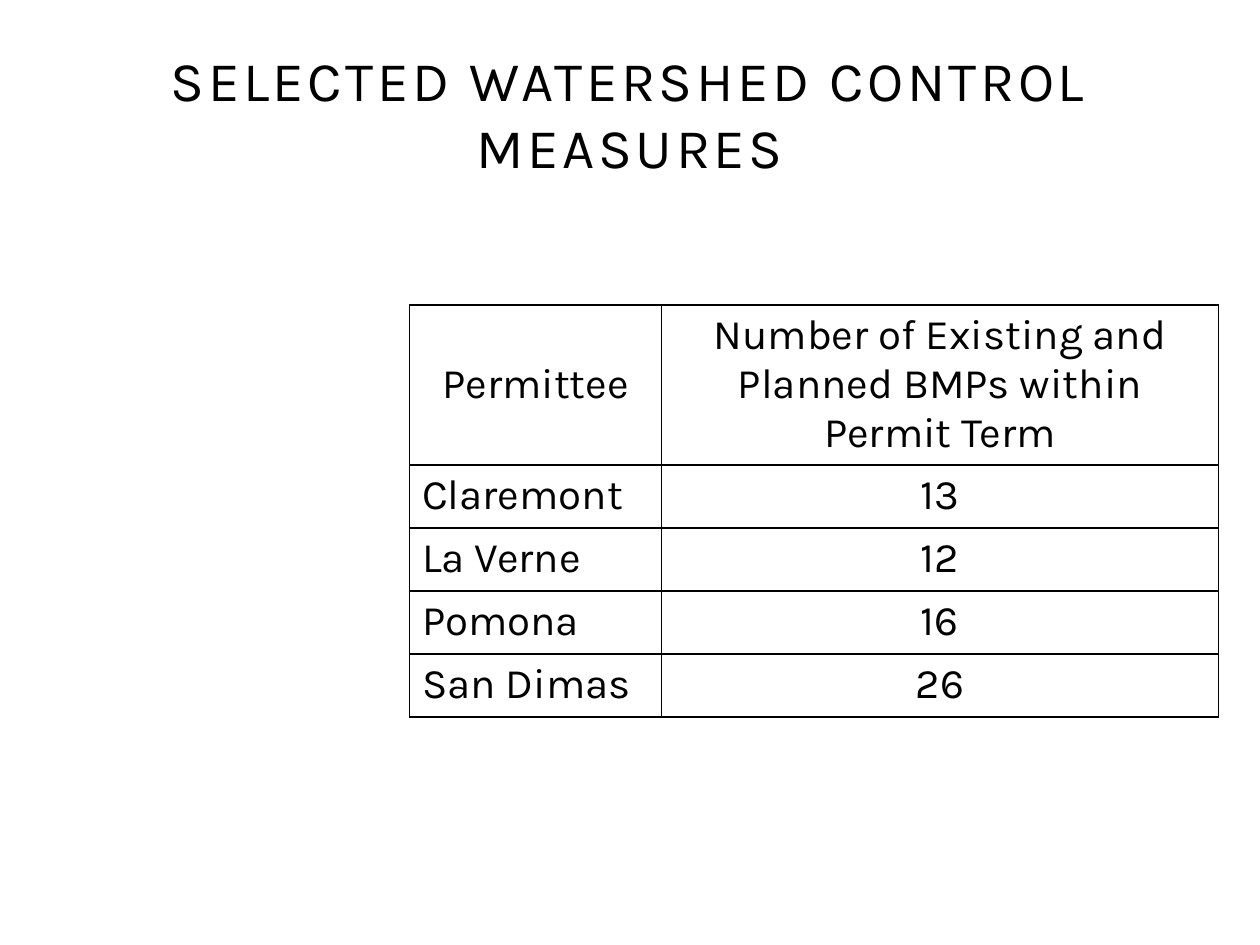
from lxml import etree
from pptx import Presentation
from pptx.dml.color import RGBColor
from pptx.enum.text import MSO_ANCHOR, MSO_AUTO_SIZE, PP_ALIGN
from pptx.oxml.ns import qn
from pptx.util import Inches, Pt

BLACK, WHITE = "000000", "FFFFFF"
FONT = "Karla"
COLUMN_WIDTHS = (2, 4.42)
HEADER_HEIGHT, ROW_HEIGHT = 1.27, 0.5
MEASURES = (
    ("Permittee", "Number of Existing and Planned BMPs within Permit Term"),
    ("Claremont", "13"),
    ("La Verne", "12"),
    ("Pomona", "16"),
    ("San Dimas", "26"),
)


def color(hex_value):
    return RGBColor.from_string(hex_value)


def format_text(paragraph, size, align):
    paragraph.alignment = align
    font = paragraph.runs[0].font
    for key, value in {"name": FONT, "size": Pt(size), "bold": False}.items():
        setattr(font, key, value)
    font.color.rgb = color(BLACK)


def add_borders(cell, width=1):
    properties = cell._tc.get_or_add_tcPr()
    for index, side in enumerate(("lnL", "lnR", "lnT", "lnB")):
        line = etree.Element(qn(f"a:{side}"), w=str(Pt(width)))
        fill = etree.SubElement(line, qn("a:solidFill"))
        etree.SubElement(fill, qn("a:srgbClr"), val=BLACK)
        properties.insert(index, line)  # borders precede the cell fill


def place_title(slide, left, top, width, height):
    title = slide.shapes.title
    box = {"left": left, "top": top, "width": width, "height": height}
    for key, value in box.items():
        setattr(title, key, Inches(value))
    frame = title.text_frame
    frame.text = "SELECTED WATERSHED CONTROL MEASURES"
    layout = {"word_wrap": True, "auto_size": MSO_AUTO_SIZE.NONE,
              "vertical_anchor": MSO_ANCHOR.MIDDLE}
    for key, value in layout.items():
        setattr(frame, key, value)
    heading = frame.paragraphs[0]
    format_text(heading, 32, PP_ALIGN.CENTER)
    # Letter spacing of 2 points
    heading.runs[0].font._element.set("spc", "200")


def place_measures(slide, left, top, width, height):
    table = slide.shapes.add_table(
        len(MEASURES), len(COLUMN_WIDTHS),
        Inches(left), Inches(top), Inches(width), Inches(height)).table
    table.first_row = table.horz_banding = False
    for column, column_width in zip(table.columns, COLUMN_WIDTHS):
        column.width = Inches(column_width)
    for r, values in enumerate(MEASURES):
        table.rows[r].height = Inches(ROW_HEIGHT if r else HEADER_HEIGHT)
        for c, value in enumerate(values):
            cell = table.cell(r, c)
            cell.text = value
            cell.vertical_anchor = MSO_ANCHOR.TOP if r else MSO_ANCHOR.MIDDLE
            cell.fill.solid()
            cell.fill.fore_color.rgb = color(WHITE)
            is_city = r > 0 and c == 0
            format_text(cell.text_frame.paragraphs[0], 24,
                        PP_ALIGN.LEFT if is_city else PP_ALIGN.CENTER)
            add_borders(cell)


def main():
    deck = Presentation()
    deck.slide_width, deck.slide_height = Inches(10), Inches(7.5)
    slide = deck.slides.add_slide(deck.slide_layouts[5])
    slide.background.fill.solid()
    slide.background.fill.fore_color.rgb = color(WHITE)

    place_title(slide, 0.5, 0.27, 9, 1.25)
    place_measures(slide, 3.25, 2.42, sum(COLUMN_WIDTHS),
                   HEADER_HEIGHT + ROW_HEIGHT * (len(MEASURES) - 1))
    deck.save("out.pptx")


if __name__ == "__main__":
    main()
